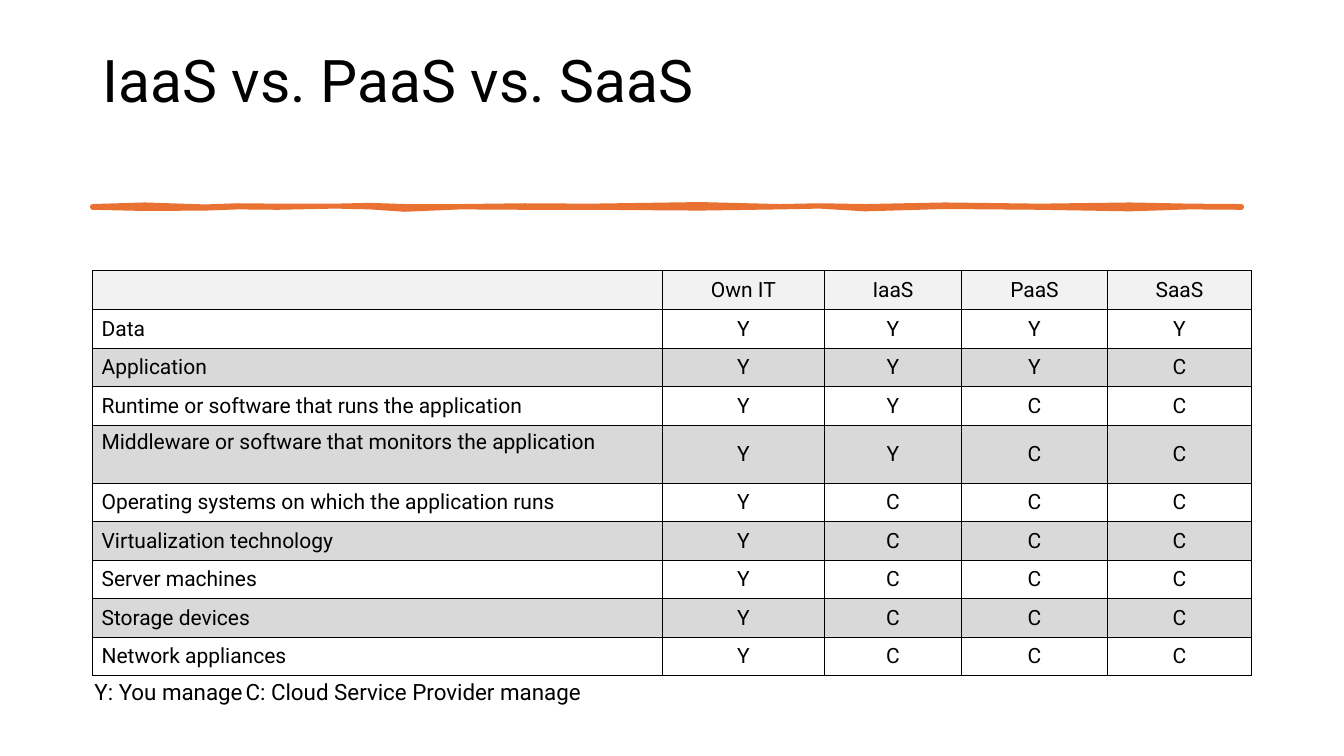
from lxml.etree import SubElement
from pptx import Presentation
from pptx.dml.color import RGBColor
from pptx.enum.text import MSO_ANCHOR as Anchor, MSO_AUTO_SIZE as AutoSize, PP_ALIGN as Align
from pptx.oxml.ns import qn
from pptx.util import Cm, Pt

FONT = "Roboto"
BLACK, ORANGE, HEADER_GREY, BAND_GREY = "000000", "E97132", "F2F2F2", "D9D9D9"
MODELS = ["Own IT", "IaaS", "PaaS", "SaaS"]
LAYERS_MANAGED_BY_YOU = [
    ("Data", 4),
    ("Application", 3),
    ("Runtime or software that runs the application", 2),
    ("Middleware or software that monitors the application", 2),
    ("Operating systems on which the application runs", 1),
    ("Virtualization technology", 1),
    ("Server machines", 1),
    ("Storage devices", 1),
    ("Network appliances", 1),
]
TALL_ROW = 4
COLUMN_WIDTHS = [14.35, 4.09, 3.45, 3.68, 3.63]
ROW_HEIGHT, TALL_ROW_HEIGHT = 0.97, 1.46
BRUSH_PROFILE = [
    (2.33, 5.2, 5.23), (3.65, 5.16, 5.26), (5.17, 5.21, 5.25), (6, 5.18, 5.22),
    (7, 5.19, 5.23), (8.44, 5.19, 5.2), (9.32, 5.17, 5.22), (10.2, 5.2, 5.28),
    (11.6, 5.2, 5.22), (13.23, 5.18, 5.23), (14.87, 5.19, 5.23), (17.64, 5.15, 5.25),
    (19.66, 5.2, 5.22), (20.66, 5.18, 5.2), (21.8, 5.2, 5.27), (23.81, 5.16, 5.21),
    (26.21, 5.19, 5.23), (28.48, 5.16, 5.27), (29.99, 5.19, 5.22), (31.29, 5.2, 5.23),
]


def color(hex_value):
    return RGBColor.from_string(hex_value)


def set_attributes(target, values):
    for name, value in values.items():
        setattr(target, name, value)


def write_text(text_frame, text, size, alignment=Align.LEFT):
    paragraph = text_frame.paragraphs[0]
    paragraph.alignment = alignment
    run = paragraph.add_run()
    run.text = text
    set_attributes(run.font, {"name": FONT, "size": Pt(size), "bold": False})
    run.font.color.rgb = color(BLACK)
    return paragraph


def add_title(slide, text):
    title = slide.shapes.title
    set_attributes(title, {
        "left": Cm(2.33), "top": Cm(1.02), "width": Cm(29.21), "height": Cm(3.68)})
    set_attributes(title.text_frame, {
        "auto_size": AutoSize.NONE, "vertical_anchor": Anchor.TOP,
        "margin_top": Cm(0.28), "word_wrap": True})
    write_text(title.text_frame, text, 42).line_spacing = 0.9


def add_brush_stroke(slide, profile):
    top_edge = [(Cm(x), Cm(top)) for x, top, _ in profile]
    bottom_edge = [(Cm(x), Cm(bottom)) for x, _, bottom in reversed(profile)]
    builder = slide.shapes.build_freeform(*top_edge[0])
    builder.add_line_segments(top_edge[1:] + bottom_edge, close=True)
    stroke = builder.convert_to_shape()
    stroke.shadow.inherit = False
    stroke.fill.solid()
    stroke.fill.fore_color.rgb = color(ORANGE)
    stroke.line.color.rgb = color(ORANGE)
    stroke.line.width = Pt(3.25)
    SubElement(stroke.line._get_or_add_ln(), qn("a:round"))


def add_borders(cell):
    properties = cell._tc.get_or_add_tcPr()
    for side in ("lnL", "lnR", "lnT", "lnB"):
        border = SubElement(properties, qn(f"a:{side}"), w=str(Pt(1)))
        fill = SubElement(border, qn("a:solidFill"))
        SubElement(fill, qn("a:srgbClr"), val=BLACK)


def format_cell(cell, text, alignment, fill_color, anchor):
    set_attributes(cell, {
        "margin_left": Cm(0.22), "margin_right": Cm(0.22),
        "margin_top": Cm(0.11), "margin_bottom": Cm(0.11),
        "vertical_anchor": anchor})
    add_borders(cell)
    if fill_color:
        cell.fill.solid()
        cell.fill.fore_color.rgb = color(fill_color)
    else:
        cell.fill.background()
    if text:
        write_text(cell.text_frame, text, 15, alignment)


def row_fill(row_index):
    if row_index == 0:
        return HEADER_GREY
    return BAND_GREY if row_index % 2 == 0 else None


def add_responsibility_table(slide):
    rows = [[""] + MODELS]
    for layer, count in LAYERS_MANAGED_BY_YOU:
        rows.append([layer] + ["Y"] * count + ["C"] * (len(MODELS) - count))
    heights = [TALL_ROW_HEIGHT if index == TALL_ROW else ROW_HEIGHT
               for index in range(len(rows))]
    table = slide.shapes.add_table(
        len(rows), len(COLUMN_WIDTHS), Cm(2.34), Cm(6.81),
        Cm(sum(COLUMN_WIDTHS)), Cm(sum(heights))).table
    set_attributes(table, {"first_row": False, "horz_banding": False})
    for column, width in zip(table.columns, COLUMN_WIDTHS):
        column.width = Cm(width)
    for row_index, texts in enumerate(rows):
        table.rows[row_index].height = Cm(heights[row_index])
        for column_index, text in enumerate(texts):
            is_label = column_index == 0
            at_top = is_label and row_index == TALL_ROW
            format_cell(
                table.cell(row_index, column_index), text,
                Align.LEFT if is_label else Align.CENTER, row_fill(row_index),
                Anchor.TOP if at_top else Anchor.MIDDLE)


def add_legend(slide, text):
    legend = slide.shapes.add_textbox(Cm(2.13), Cm(16.97), Cm(14.3), Cm(0.94))
    set_attributes(legend.text_frame, {
        "word_wrap": False, "auto_size": AutoSize.SHAPE_TO_FIT_TEXT})
    write_text(legend.text_frame, text, 16)


def main():
    presentation = Presentation()
    set_attributes(presentation, {"slide_width": Cm(33.87), "slide_height": Cm(19.05)})
    slide = presentation.slides.add_slide(presentation.slide_layouts[5])
    add_title(slide, "IaaS vs. PaaS vs. SaaS")
    add_brush_stroke(slide, BRUSH_PROFILE)
    add_responsibility_table(slide)
    add_legend(slide, "Y: You manage\tC: Cloud Service Provider manage")
    presentation.save("out.pptx")


if __name__ == "__main__":
    main()
